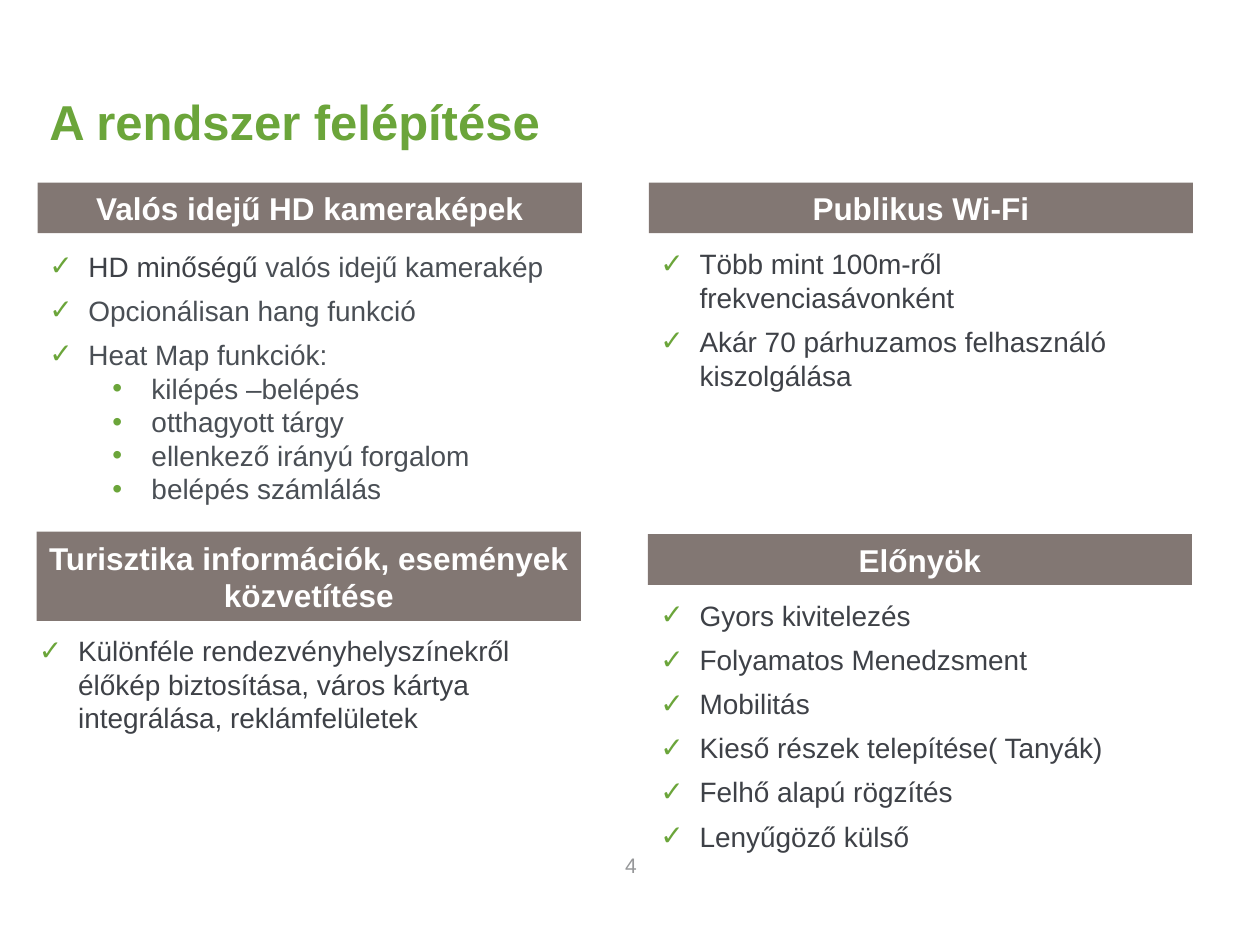
from lxml.etree import SubElement
from pptx import Presentation
from pptx.dml.color import RGBColor
from pptx.enum.shapes import MSO_SHAPE
from pptx.enum.text import MSO_ANCHOR, MSO_AUTO_SIZE, PP_ALIGN
from pptx.oxml.ns import qn
from pptx.util import Cm, Pt

GREEN, BROWN, WHITE, GRAY = "6BA53A", "827773", "FFFFFF", "969799"
DARK, SLATE = "3E4147", "4A4F55"
HEADER_WIDTH = 10.97
HANGING = 0.79

HEADERS = [
    ("Valós idejű HD kameraképek", 0.76, 3.68, 1.02),
    ("Turisztika információk, események közvetítése", 0.74, 10.72, 1.8),
    ("Publikus Wi-Fi", 13.08, 3.68, 1.02),
    ("Előnyök", 13.06, 10.77, 1.02),
]
CAMERA_ITEMS = [
    [("HD minőségű ", DARK), ("valós idejű kamerakép", SLATE)],
    [("Opcionálisan hang funkció", SLATE)],
    [("Heat Map funkciók:", SLATE)],
]
CAMERA_SUBITEMS = [
    "kilépés –belépés",
    "otthagyott tárgy",
    "ellenkező irányú forgalom",
    "belépés számlálás",
]
TOURISM_ITEMS = [
    "Különféle rendezvényhelyszínekről élőkép biztosítása, "
    "város kártya integrálása, reklámfelületek",
]
WIFI_ITEMS = [
    "Több mint 100m-ről frekvenciasávonként",
    "Akár 70 párhuzamos felhasználó kiszolgálása",
]
BENEFIT_ITEMS = [
    "Gyors kivitelezés",
    "Folyamatos Menedzsment",
    "Mobilitás",
    "Kieső részek telepítése( Tanyák)",
    "Felhő alapú rögzítés",
    "Lenyűgöző külső",
]


def color(value):
    return RGBColor.from_string(value)


def style_font(font, size, value, bold=False):
    font.name = "Arial"
    font.size = Pt(size)
    font.bold = bold
    font.color.rgb = color(value)


def place(shape, left, top, width, height):
    shape.left, shape.top = Cm(left), Cm(top)
    shape.width, shape.height = Cm(width), Cm(height)


def prepare_frame(shape, anchor):
    frame = shape.text_frame
    frame.word_wrap = True
    frame.auto_size = MSO_AUTO_SIZE.NONE
    frame.vertical_anchor = anchor
    return frame


def write_line(shape, text, size, value, bold, alignment):
    para = prepare_frame(shape, MSO_ANCHOR.MIDDLE).paragraphs[0]
    para.text = text
    para.alignment = alignment
    style_font(para.font, size, value, bold)
    return para


def set_bullet(para, character, margin):
    properties = para._p.get_or_add_pPr()
    properties.set("marL", str(Cm(margin)))
    properties.set("indent", str(-Cm(HANGING)))
    bullet_color = SubElement(properties, qn("a:buClr"))
    SubElement(bullet_color, qn("a:srgbClr"), val=GREEN)
    SubElement(properties, qn("a:buFont"), typeface="Arial")
    SubElement(properties, qn("a:buChar"), char=character)


def add_title(slide):
    title = slide.shapes.title
    place(title, 0.74, 1.47, 22.94, 2.08)
    para = write_line(title, "A rendszer felépítése", 28, GREEN, True, PP_ALIGN.LEFT)
    para.line_spacing = 0.9


def add_header(slide, text, left, top, height):
    header = slide.shapes.add_shape(
        MSO_SHAPE.RECTANGLE, Cm(left), Cm(top), Cm(HEADER_WIDTH), Cm(height)
    )
    header.shadow.inherit = False
    header.fill.solid()
    header.fill.fore_color.rgb = color(BROWN)
    header.line.fill.background()
    write_line(header, text, 18, WHITE, True, PP_ALIGN.CENTER)


def add_item(frame, spans, level=0, space_after=6):
    para = frame.paragraphs[0]
    if para.runs:
        para = frame.add_paragraph()
    para.level = level
    if level:
        set_bullet(para, "•", 2.06)
    else:
        set_bullet(para, "✓", HANGING)
    para.line_spacing = 1.0
    para.space_before = Pt(0)
    para.space_after = Pt(space_after)
    style_font(para.font, 16, spans[0][1])
    for text, value in spans:
        span = para.add_run()
        span.text = text
        if len(spans) > 1:
            span.font.color.rgb = color(value)


def list_frame(slide, index, *bounds):
    body = slide.placeholders[index]
    place(body, *bounds)
    return prepare_frame(body, MSO_ANCHOR.TOP)


def add_camera_list(slide):
    frame = list_frame(slide, 1, 0.74, 4.9, 10.97, 5.69)
    for spans in CAMERA_ITEMS:
        add_item(frame, spans, space_after=0 if spans is CAMERA_ITEMS[-1] else 6)
    for text in CAMERA_SUBITEMS:
        add_item(frame, [(text, SLATE)], level=1, space_after=0)


def add_list(slide, index, items, *bounds):
    frame = list_frame(slide, index, *bounds)
    for text in items:
        add_item(frame, [(text, DARK)])


def add_page_number(slide):
    box = slide.shapes.add_textbox(Cm(9.86), Cm(16.94), Cm(5.72), Cm(1.02))
    write_line(box, "4", 12, GRAY, False, PP_ALIGN.CENTER)


def main():
    deck = Presentation()
    deck.slide_width, deck.slide_height = Cm(25.4), Cm(19.05)
    page = deck.slides.add_slide(deck.slide_layouts.get_by_name("Comparison"))
    add_title(page)
    for header in HEADERS:
        add_header(page, *header)
    add_camera_list(page)
    add_list(page, 2, TOURISM_ITEMS, 0.53, 12.65, 11.33, 2.31)
    add_list(page, 3, WIFI_ITEMS, 13.06, 4.85, 11.02, 3.2)
    add_list(page, 4, BENEFIT_ITEMS, 13.06, 11.94, 12.3, 5.44)
    add_page_number(page)
    deck.save("out.pptx")


if __name__ == "__main__":
    main()
